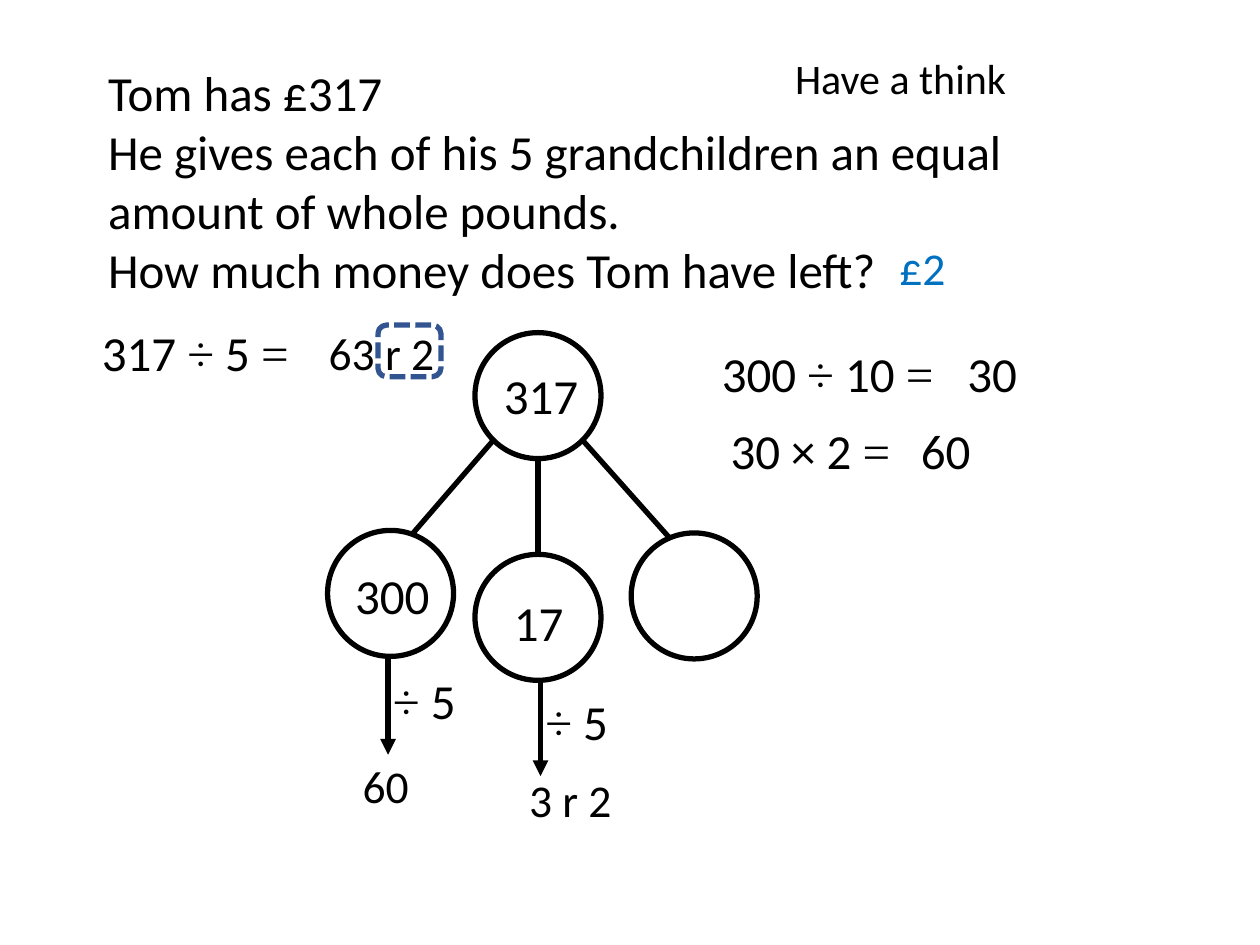
"""Build a division word problem with a part-whole diagram and worked answers."""
from itertools import groupby
from math import cos, radians, sin

from lxml.etree import SubElement
from pptx import Presentation
from pptx.dml.color import RGBColor
from pptx.enum.dml import MSO_LINE
from pptx.enum.shapes import MSO_CONNECTOR, MSO_SHAPE
from pptx.enum.text import MSO_ANCHOR, PP_ALIGN
from pptx.oxml.ns import qn
from pptx.util import Inches, Pt

BLACK, WHITE, BLUE, NAVY = "000000", "FFFFFF", "0070C0", "325491"
HEADING = ("Have a think", (6.21, 0.37, 2.29, 0.5))
PROBLEM = [
    "Tom has £317",
    "He gives each of his 5 grandchildren an equal amount of whole pounds.",
    "How much money does Tom have left?",
]
PROBLEM_BOX = (0.76, 0.45, 7.91, 1.99)
CALCULATIONS = [
    ("317 ÷ 5 =", (0.71, 2.51, 2.18, 0.57)),
    ("300 ÷ 10 =", (5.63, 2.68, 2.18, 0.57)),
    ("30", (7.58, 2.68, 0.7, 0.57)),
    ("30 × 2 =", (5.7, 3.29, 1.67, 0.57)),
    ("60", (7.21, 3.29, 0.85, 0.57)),
]
ANSWERS = [
    ("63 r 2", (2.51, 2.53), BLACK),
    ("£2", (7.04, 1.86), BLUE),
    ("60", (2.78, 5.97), BLACK),
    ("3 r 2", (4.1, 6.08), BLACK),
]
REMAINDER_BOX = (3, 2.58, 0.5, 0.41)
RADIUS = 0.5
WHOLE = {"label": "317", "center": (4.27, 3.14), "label_at": (3.9, 2.85)}
PARTS = [
    {"label": "300", "center": (3.1, 4.71), "label_at": (2.72, 4.44), "angles": (135, -70)},
    {"label": "17", "center": (4.27, 4.9), "label_at": (3.98, 4.65), "angles": (90, -90)},
    {"label": "", "center": (5.51, 4.73), "angles": (45, -113)},
]
DIVISION = "÷ 5"
DIVISION_ARROWS = [(3.08, 5.23), (4.29, 5.4)]
ARROW_LENGTH = 0.76


def color(value):
    return RGBColor.from_string(value)


def write_text(shape, paragraphs, size=28, fill=BLACK, wrap=True):
    frame = shape.text_frame
    frame.word_wrap = wrap
    frame.vertical_anchor = MSO_ANCHOR.TOP
    for index, text in enumerate(paragraphs):
        paragraph = frame.paragraphs[0] if index == 0 else frame.add_paragraph()
        paragraph.alignment = PP_ALIGN.LEFT
        for is_symbol, characters in groupby(text, key=lambda character: character in "÷="):
            run = paragraph.add_run()
            run.text = "".join(characters)
            run.font.name = "Times New Roman" if is_symbol else "Calibri"
            run.font.size = Pt(size)
            run.font.color.rgb = color(fill)


def add_text(slide, paragraphs, box, **text_format):
    shape = slide.shapes.add_textbox(*map(Inches, box))
    write_text(shape, paragraphs, **text_format)


def add_outline(slide, kind, box, line, fill=None):
    shape = slide.shapes.add_shape(kind, *map(Inches, box))
    shape.shadow.inherit = False
    if fill:
        shape.fill.solid()
        shape.fill.fore_color.rgb = color(fill)
    else:
        shape.fill.background()
    shape.line.color.rgb = color(line)
    shape.line.width = Pt(3)
    return shape


def add_line(slide, start, end, arrow=False):
    connector = slide.shapes.add_connector(MSO_CONNECTOR.STRAIGHT, *map(Inches, (*start, *end)))
    connector.line.color.rgb = color(BLACK)
    connector.line.width = Pt(3)
    if arrow:
        SubElement(connector.line._get_or_add_ln(), qn("a:tailEnd"), type="triangle")
    SubElement(connector._element.spPr, qn("a:effectLst"))


def edge_point(center, angle):
    x, y = center
    return x + RADIUS * cos(radians(angle)), y + RADIUS * sin(radians(angle))


def add_circle(slide, node):
    x, y = node["center"]
    box = (x - RADIUS, y - RADIUS, 2 * RADIUS, 2 * RADIUS)
    add_outline(slide, MSO_SHAPE.OVAL, box, BLACK, WHITE)
    if node["label"]:
        add_text(slide, [node["label"]], (*node["label_at"], 1.02, 0.57))


def main():
    presentation = Presentation()
    presentation.slide_width, presentation.slide_height = Inches(10), Inches(7.5)
    slide = presentation.slides.add_slide(presentation.slide_layouts[5])

    heading, heading_box = HEADING
    title = slide.shapes.title
    title.left, title.top, title.width, title.height = map(Inches, heading_box)
    write_text(title, [heading], size=24)
    add_text(slide, PROBLEM, PROBLEM_BOX)

    for node in [WHOLE, *PARTS]:
        add_circle(slide, node)
    for part in PARTS:
        whole_angle, part_angle = part["angles"]
        add_line(slide, edge_point(WHOLE["center"], whole_angle),
                 edge_point(part["center"], part_angle))
    for x, y in DIVISION_ARROWS:
        add_line(slide, (x, y), (x, y + ARROW_LENGTH), arrow=True)
        add_text(slide, [DIVISION], (x - 0.06, y + 0.04, 0.78, 0.57), wrap=False)

    for text, box in CALCULATIONS:
        add_text(slide, [text], box)
    for text, position, fill in ANSWERS:
        add_text(slide, [text], (*position, 1.08, 0.54), size=26, fill=fill)
    remainder = add_outline(slide, MSO_SHAPE.ROUNDED_RECTANGLE, REMAINDER_BOX, NAVY)
    remainder.line.dash_style = MSO_LINE.SQUARE_DOT

    presentation.save("out.pptx")


if __name__ == "__main__":
    main()
